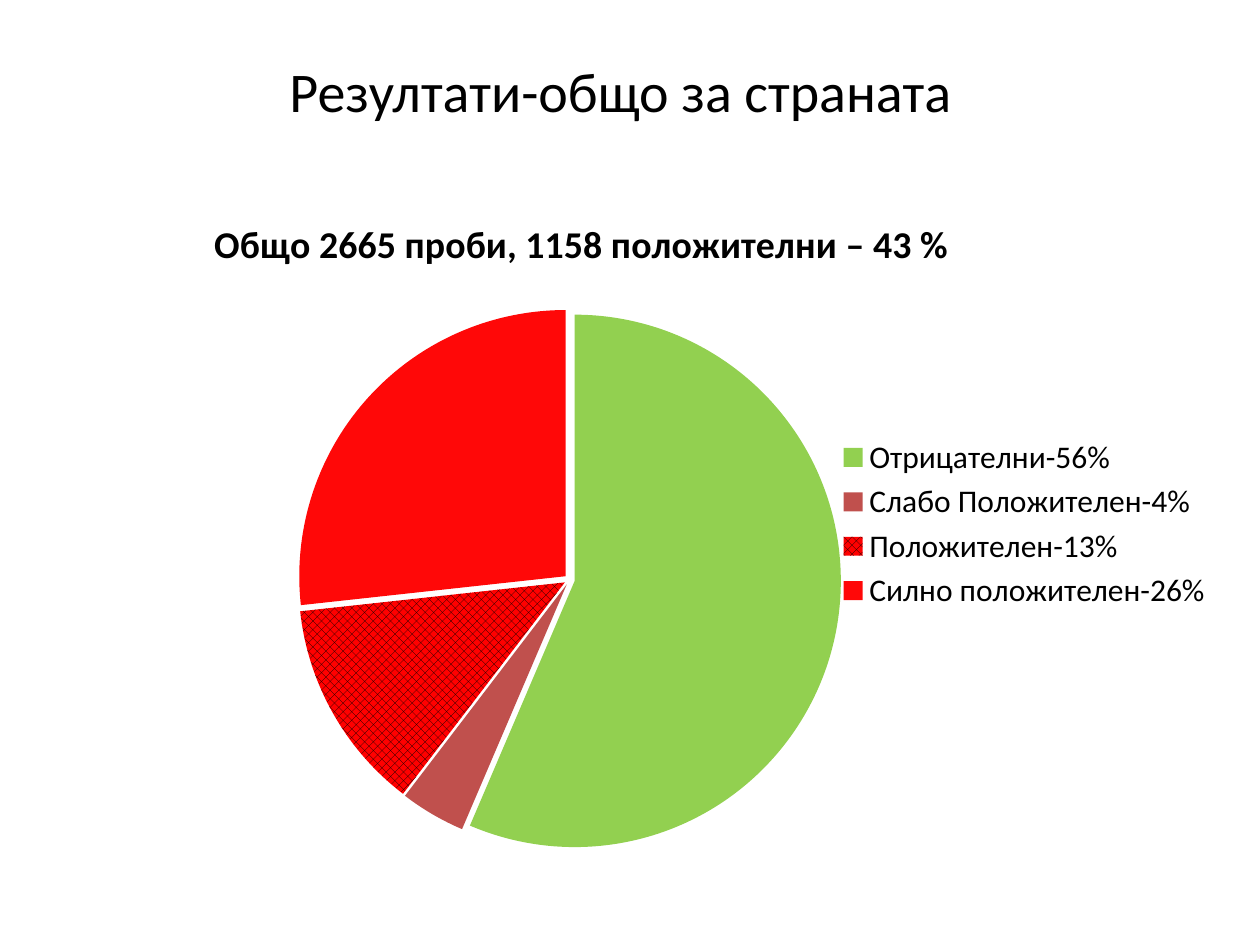
from lxml import etree
from pptx import Presentation
from pptx.chart.data import CategoryChartData
from pptx.dml.color import RGBColor
from pptx.enum.chart import XL_CHART_TYPE, XL_LEGEND_POSITION
from pptx.enum.dml import MSO_PATTERN
from pptx.enum.text import MSO_ANCHOR, PP_ALIGN
from pptx.oxml.ns import qn
from pptx.util import Cm, Pt

PIE = XL_CHART_TYPE.PIE
LEGEND_RIGHT = XL_LEGEND_POSITION.RIGHT
HATCH = MSO_PATTERN.PERCENT_50
MIDDLE = MSO_ANCHOR.MIDDLE
CENTER = PP_ALIGN.CENTER

FONT = "Calibri"
BLACK = "000000"
RED = "FF0000"
RESULTS = [
    ("Отрицателни-56%", 57, "92D050"),
    ("Слабо Положителен-4%", 4, "C0504D"),
    ("Положителен-13%", 13, RED),
    ("Силно положителен-26%", 27, RED),
]
HATCHED_SLICE = 2
TRANSLUCENT_SLICE = 3


def color(value):
    return RGBColor.from_string(value)


def style_font(font, size, bold=False):
    font.name = FONT
    font.size = Pt(size)
    font.bold = bold
    font.color.rgb = color(BLACK)


def add_heading(slide, text, left, top, width, height):
    shape = slide.shapes.add_textbox(Cm(left), Cm(top), Cm(width), Cm(height))
    frame = shape.text_frame
    frame.word_wrap = True
    frame.vertical_anchor = MIDDLE
    paragraph = frame.paragraphs[0]
    paragraph.alignment = CENTER
    run = paragraph.add_run()
    run.text = text
    style_font(run.font, 32)


def set_layout(parent, index, **settings):
    for existing in parent.findall(qn("c:layout")):
        parent.remove(existing)
    layout = etree.Element(qn("c:layout"))
    manual = etree.SubElement(layout, qn("c:manualLayout"))
    for name, value in settings.items():
        etree.SubElement(manual, qn(f"c:{name}")).set("val", str(value))
    parent.insert(index, layout)


def add_chart_title(chart, text):
    title = chart.chart_title
    run = title.text_frame.paragraphs[0].add_run()
    run.text = text
    style_font(run.font, 21.6, bold=True)
    set_layout(title._element, 1, xMode="edge", yMode="edge", x=0.1, y=0.05)


def color_slices(series):
    for index, (_, _, slice_color) in enumerate(RESULTS):
        fill = series.points[index].format.fill
        if index == HATCHED_SLICE:
            fill.patterned()
            fill.pattern = HATCH
            fill.fore_color.rgb = color(BLACK)
            fill.back_color.rgb = color(slice_color)
        else:
            fill.solid()
            fill.fore_color.rgb = color(slice_color)
    points = series._element.findall(qn("c:dPt"))
    solid_color = points[TRANSLUCENT_SLICE].find(".//" + qn("a:srgbClr"))
    etree.SubElement(solid_color, qn("a:alpha")).set("val", "97000")
    explosion = etree.Element(qn("c:explosion"))
    explosion.set("val", "2")
    points[0].addprevious(explosion)


def add_results_pie(slide, left, top, width, height):
    data = CategoryChartData()
    data.categories = [label for label, _, _ in RESULTS]
    data.add_series("Series 1", [value for _, value, _ in RESULTS])
    chart = slide.shapes.add_chart(
        PIE, Cm(left), Cm(top), Cm(width), Cm(height), data
    ).chart
    style_font(chart.font, 18)
    add_chart_title(chart, "Общо 2665 проби, 1158 положителни – 43 %")
    chart.has_legend = True
    chart.legend.position = LEGEND_RIGHT
    chart.legend.include_in_layout = False
    style_font(chart.legend.font, 18)
    plot = chart.plots[0]
    plot.vary_by_categories = True
    color_slices(plot.series[0])
    set_layout(
        plot._element.getparent(), 0, layoutTarget="inner",
        xMode="edge", yMode="edge", x=0.18, y=0.19, w=0.48, h=0.78,
    )


def main():
    presentation = Presentation()
    presentation.slide_width = Cm(25.4)
    presentation.slide_height = Cm(19.05)
    slide = presentation.slides.add_slide(presentation.slide_layouts[6])
    add_heading(slide, "Резултати-общо за страната", 0.3, 1.12, 24.43, 1.4)
    add_results_pie(slide, 1.9, 3.53, 22.81, 14.07)
    presentation.save("out.pptx")


if __name__ == "__main__":
    main()
